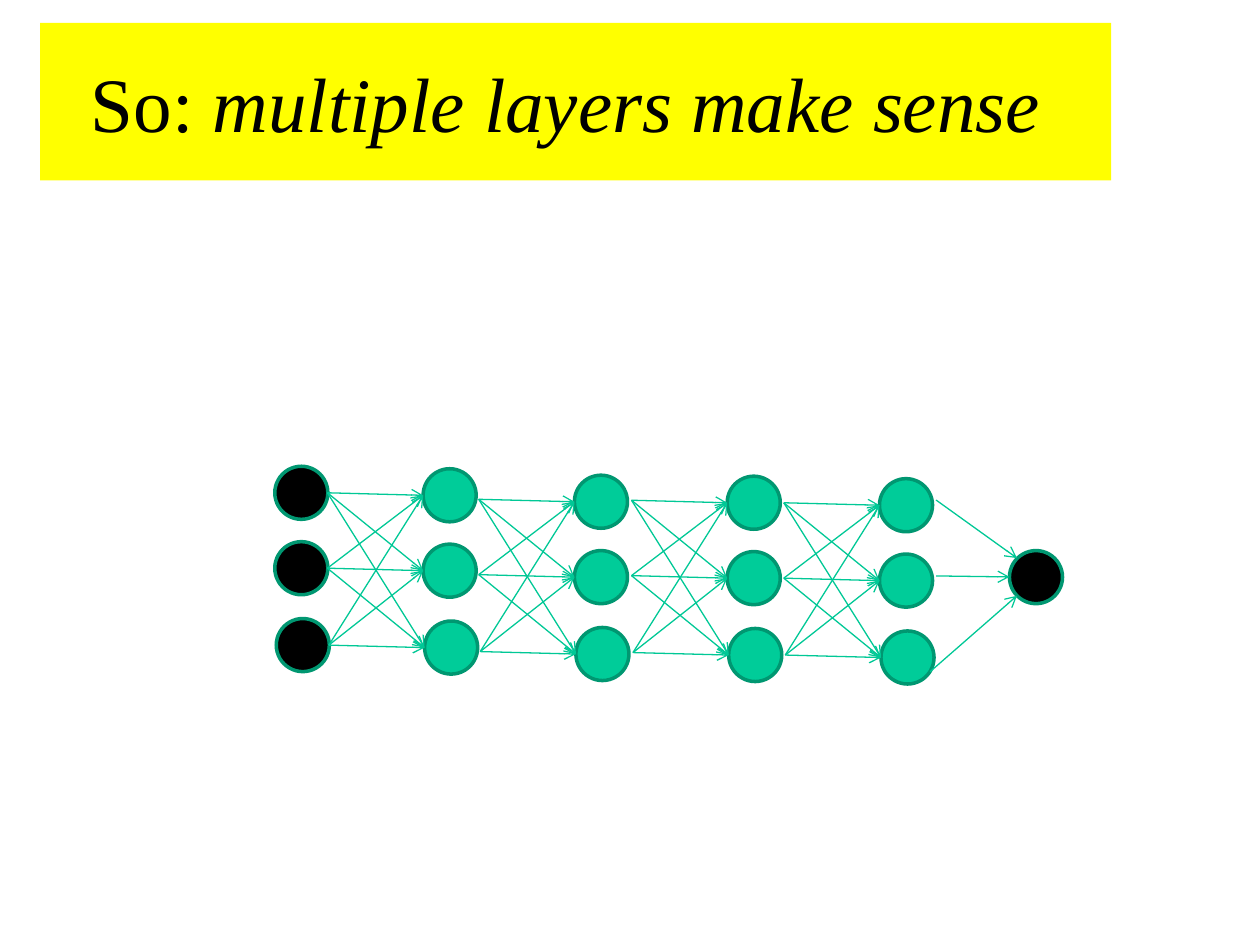
from pptx import Presentation
from pptx.dml.color import RGBColor
from pptx.enum.shapes import MSO_CONNECTOR as Connector, MSO_SHAPE as Shape
from pptx.enum.text import MSO_ANCHOR as Anchor, PP_ALIGN as Align
from pptx.oxml.ns import qn
from pptx.util import Cm, Pt
from lxml.etree import SubElement

FONT = "Times New Roman"
BLACK, YELLOW = "000000", "FFFF00"
GREEN, RIM, LINK = "00CC99", "009771", "00C896"

# Network geometry in centimetres
DIAMETER = 1.07
ROWS = [(0, 0), (0, 1.52), (0.03, 3.07)]
INPUT_LAYER = (5.54, 9.40)
HIDDEN_LAYERS = [(8.53, 9.45), (11.58, 9.58), (14.66, 9.60), (17.73, 9.65)]
LINK_SPAN = (1.93, 0.05)
OUTPUT = (20.35, 11.10)
OUTPUT_LINKS = [
    ((18.87, 10.08), (20.50, 11.25)),
    ((18.87, 11.61), (20.35, 11.63)),
    ((18.75, 13.54), (20.50, 12.01)),
]


def color(code):
    return RGBColor.from_string(code)


def add_title(page, parts):
    box = page.shapes.add_shape(
        Shape.RECTANGLE, Cm(0.81), Cm(0.46), Cm(21.59), Cm(3.18))
    box.shadow.inherit = False
    box.fill.solid()
    box.fill.fore_color.rgb = color(YELLOW)
    box.line.fill.background()
    frame = box.text_frame
    frame.word_wrap = True
    frame.vertical_anchor = Anchor.MIDDLE
    para = frame.paragraphs[0]
    para.alignment = Align.CENTER
    for text, italic in parts:
        span = para.add_run()
        span.text = text
        span.font.name = FONT
        span.font.size = Pt(44)
        span.font.italic = italic
        span.font.color.rgb = color(BLACK)


def add_neuron(page, place, fill):
    left, top = place
    neuron = page.shapes.add_shape(
        Shape.OVAL, Cm(left), Cm(top), Cm(DIAMETER), Cm(DIAMETER))
    neuron.shadow.inherit = False
    neuron.fill.solid()
    neuron.fill.fore_color.rgb = color(fill)
    neuron.line.color.rgb = color(RIM)
    neuron.line.width = Pt(2)


def add_link(page, start, end):
    link = page.shapes.add_connector(
        Connector.STRAIGHT, *(Cm(value) for value in (*start, *end)))
    link.line.color.rgb = color(LINK)
    link.line.width = Pt(0.75)
    # Open arrowhead, no shadow
    SubElement(link.line._get_or_add_ln(), qn("a:tailEnd"), type="arrow")
    SubElement(link._element.spPr, qn("a:effectLst"))


def layer_places(layer):
    left, top = layer
    return [(left + dx, top + dy) for dx, dy in ROWS]


def add_layer(page, layer, fill):
    for place in layer_places(layer):
        add_neuron(page, place, fill)


def add_incoming_links(page, layer):
    """Link every neuron of the layer before to every neuron of this one."""
    ends = [(left, top + DIAMETER / 2) for left, top in layer_places(layer)]
    for x, y in ends:
        for end in ends:
            add_link(page, (x - LINK_SPAN[0], y - LINK_SPAN[1]), end)


def main():
    deck = Presentation()
    deck.slide_width, deck.slide_height = Cm(25.4), Cm(19.05)
    page = deck.slides.add_slide(deck.slide_layouts[6])

    add_title(page, [("So: ", False), ("multiple layers make sense ", True)])

    # Input and hidden layers
    add_layer(page, INPUT_LAYER, BLACK)
    for layer in HIDDEN_LAYERS:
        add_layer(page, layer, GREEN)
        add_incoming_links(page, layer)

    # Output
    add_neuron(page, OUTPUT, BLACK)
    for start, end in OUTPUT_LINKS:
        add_link(page, start, end)

    deck.save("out.pptx")


if __name__ == "__main__":
    main()
